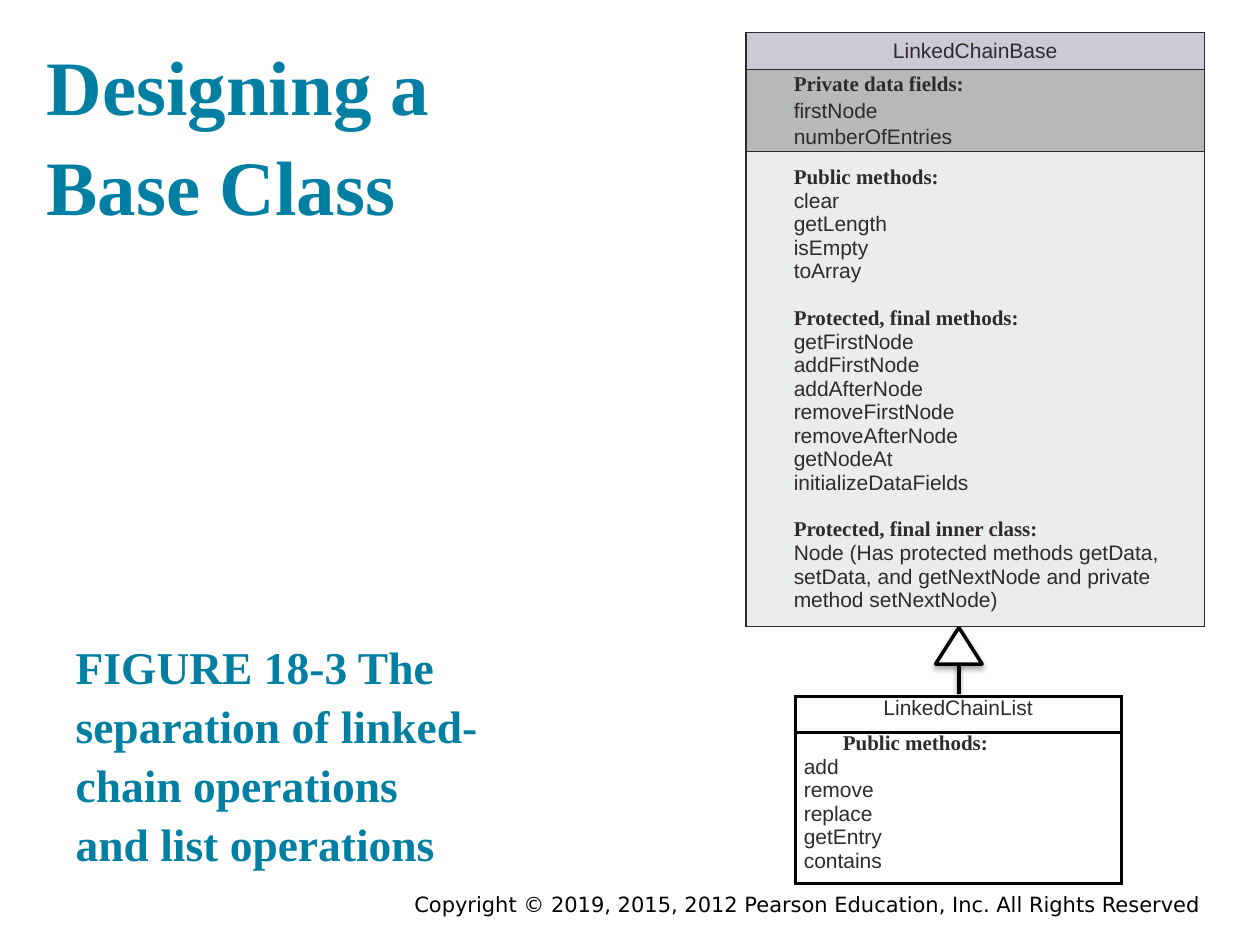
from lxml import etree
from pptx import Presentation, util as u
from pptx.dml.color import RGBColor
from pptx.enum import shapes, text
from pptx.oxml import ns

TITLE = "Designing a Base Class"
CAPTION = "FIGURE 18-3 The separation of linked-chain operations and list operations"
COPYRIGHT = "Copyright © 2019, 2015, 2012 Pearson Education, Inc. All Rights Reserved"

BASE_FIELDS = [("Private data fields:", ["firstNode", "numberOfEntries"])]
BASE_METHODS = [
    ("Public methods:", ["clear", "getLength", "isEmpty", "toArray"]),
    ("Protected, final methods:", [
        "getFirstNode", "addFirstNode", "addAfterNode", "removeFirstNode",
        "removeAfterNode", "getNodeAt", "initializeDataFields"]),
    ("Protected, final inner class:", [
        "Node (Has protected methods getData, setData, and getNextNode "
        "and private method setNextNode)"]),
]
LIST_METHODS = [("Public methods:", ["add", "remove", "replace", "getEntry", "contains"])]

CLASSES = [
    dict(name="LinkedChainBase", at=(5.92, 0.26), width=3.64, border=("2F2A2B", 1),
         rows=(0.29, 0.64, 3.54), fills=("CDCAD7", "B6B8BA", "EBECED"),
         parts=(BASE_FIELDS, BASE_METHODS), spacing=((1.04, 1), (1, 0)),
         item_indent=0.31, anchor=text.MSO_ANCHOR.MIDDLE),
    dict(name="LinkedChainList", at=(6.31, 5.53), width=2.59, border=("000000", 2),
         rows=(0.28, 1.2), fills=(None, None),
         parts=(LIST_METHODS,), spacing=((1, 0),),
         item_indent=0, anchor=text.MSO_ANCHOR.TOP),
]

THEME = dict(serif="Times New Roman", sans="Arial", footer="DejaVu Sans",
             accent="007FA3", ink="2F2A2B", black="000000", white="FFFFFF",
             title=44, caption=26, small=12, gap=13.4, heading_indent=0.31)


def box(*lengths):
    return [u.Inches(v) for v in lengths]


def add_run(p, words, font, size, color, bold=False):
    r = p.add_run()
    r.text = words
    r.font.name, r.font.size, r.font.bold = font, u.Pt(size), bold
    r.font.color.rgb = RGBColor.from_string(color)


def set_indent(p, inches):
    pPr = p._p.get_or_add_pPr()
    pPr.set("marL", str(u.Inches(inches)))
    pPr.set("indent", "0")


def fill_placeholder(sp, at, words, size):
    sp.left, sp.top, sp.width, sp.height = box(*at)
    tf = sp.text_frame
    tf.word_wrap, tf.auto_size = True, text.MSO_AUTO_SIZE.NONE
    tf.vertical_anchor = text.MSO_ANCHOR.BOTTOM
    tf.margin_left = tf.margin_right = tf.margin_top = tf.margin_bottom = u.Inches(0.1)
    p = tf.paragraphs[0]
    set_indent(p, 0)
    etree.SubElement(p._p.get_or_add_pPr(), ns.qn("a:buNone"))
    p.alignment, p.line_spacing, p.space_before = text.PP_ALIGN.LEFT, 1.08, u.Pt(0)
    add_run(p, words, THEME["serif"], size, THEME["accent"], True)


def add_shadow(sp, alpha, distance):
    spPr = sp._element.spPr
    effects = etree.SubElement(spPr, ns.qn("a:effectLst"))
    shadow = etree.SubElement(effects, ns.qn("a:outerShdw"), blurRad=str(u.Pt(3)),
                              dist=str(u.Pt(distance)), dir="5400000", rotWithShape="0")
    color = etree.SubElement(shadow, ns.qn("a:srgbClr"), val=THEME["black"])
    etree.SubElement(color, ns.qn("a:alpha"), val=str(alpha * 1000))


def style_cell(cell, fill, border, anchor):
    color, width = border
    tcPr = cell._tc.get_or_add_tcPr()
    for side in ("lnL", "lnR", "lnT", "lnB"):
        ln = etree.SubElement(tcPr, ns.qn("a:" + side), w=str(u.Pt(width)))
        solid = etree.SubElement(ln, ns.qn("a:solidFill"))
        etree.SubElement(solid, ns.qn("a:srgbClr"), val=color)
    if fill:
        cell.fill.solid()
        cell.fill.fore_color.rgb = RGBColor.from_string(fill)
    else:
        cell.fill.background()
    cell.margin_left = cell.margin_right = u.Inches(0.07)
    cell.margin_top = cell.margin_bottom = 0
    cell.vertical_anchor = anchor


def write_sections(tf, sections, spacing, item_indent):
    line, before = spacing
    lines = [(words, words == heading, n > 0 and words == heading)
             for n, (heading, items) in enumerate(sections)
             for words in [heading, *items]]
    for i, (words, is_heading, new_group) in enumerate(lines):
        p = tf.add_paragraph() if i else tf.paragraphs[0]
        set_indent(p, THEME["heading_indent"] if is_heading else item_indent)
        p.line_spacing = line
        p.space_before = u.Pt(THEME["gap"] if new_group else before if i else 0)
        add_run(p, words, THEME["serif" if is_heading else "sans"],
                THEME["small"], THEME["ink"], is_heading)


def add_class(s, c):
    frame = s.shapes.add_table(len(c["rows"]), 1, *box(*c["at"], c["width"], sum(c["rows"])))
    table = frame.table
    table.first_row = table.horz_banding = False
    for i, (height, fill) in enumerate(zip(c["rows"], c["fills"])):
        table.rows[i].height = u.Inches(height)
        style_cell(table.cell(i, 0), fill, c["border"], c["anchor"])
    p = table.cell(0, 0).text_frame.paragraphs[0]
    p.alignment = text.PP_ALIGN.CENTER
    add_run(p, c["name"], THEME["sans"], THEME["small"], THEME["ink"])
    for i, (sections, spacing) in enumerate(zip(c["parts"], c["spacing"]), 1):
        write_sections(table.cell(i, 0).text_frame, sections, spacing, c["item_indent"])


def add_inheritance(s, x, top, bottom, width, height):
    black = RGBColor.from_string(THEME["black"])
    stem = s.shapes.add_connector(shapes.MSO_CONNECTOR.STRAIGHT,
                                  *box(x, bottom, x, top + height))
    head = s.shapes.add_shape(shapes.MSO_SHAPE.ISOSCELES_TRIANGLE,
                              *box(x - width / 2, top, width, height))
    head.fill.solid()
    head.fill.fore_color.rgb = RGBColor.from_string(THEME["white"])
    for sp, alpha, distance in ((stem, 38, 1.6), (head, 35, 1.8)):
        sp.line.color.rgb, sp.line.width = black, u.Pt(2)
        add_shadow(sp, alpha, distance)


def add_footer(s):
    tf = s.shapes.add_textbox(*box(1.75, 7.03, 7.83, 0.31)).text_frame
    tf.word_wrap = True
    tf.margin_left = tf.margin_right = tf.margin_top = tf.margin_bottom = u.Inches(0.05)
    p = tf.paragraphs[0]
    p.alignment = text.PP_ALIGN.RIGHT
    add_run(p, COPYRIGHT, THEME["footer"], THEME["small"], THEME["black"])


def main():
    prs = Presentation()
    prs.slide_width, prs.slide_height = box(10, 7.5)
    s = prs.slides.add_slide(prs.slide_layouts[1])
    fill_placeholder(s.shapes.title, (0.27, 0, 3.89, 1.93), TITLE, THEME["title"])
    fill_placeholder(s.placeholders[1], (0.5, 5.08, 3.43, 1.93), CAPTION, THEME["caption"])
    add_footer(s)
    add_inheritance(s, 7.61, 4.98, 5.51, 0.37, 0.29)
    for c in CLASSES:
        add_class(s, c)
    prs.save("out.pptx")


if __name__ == "__main__":
    main()
